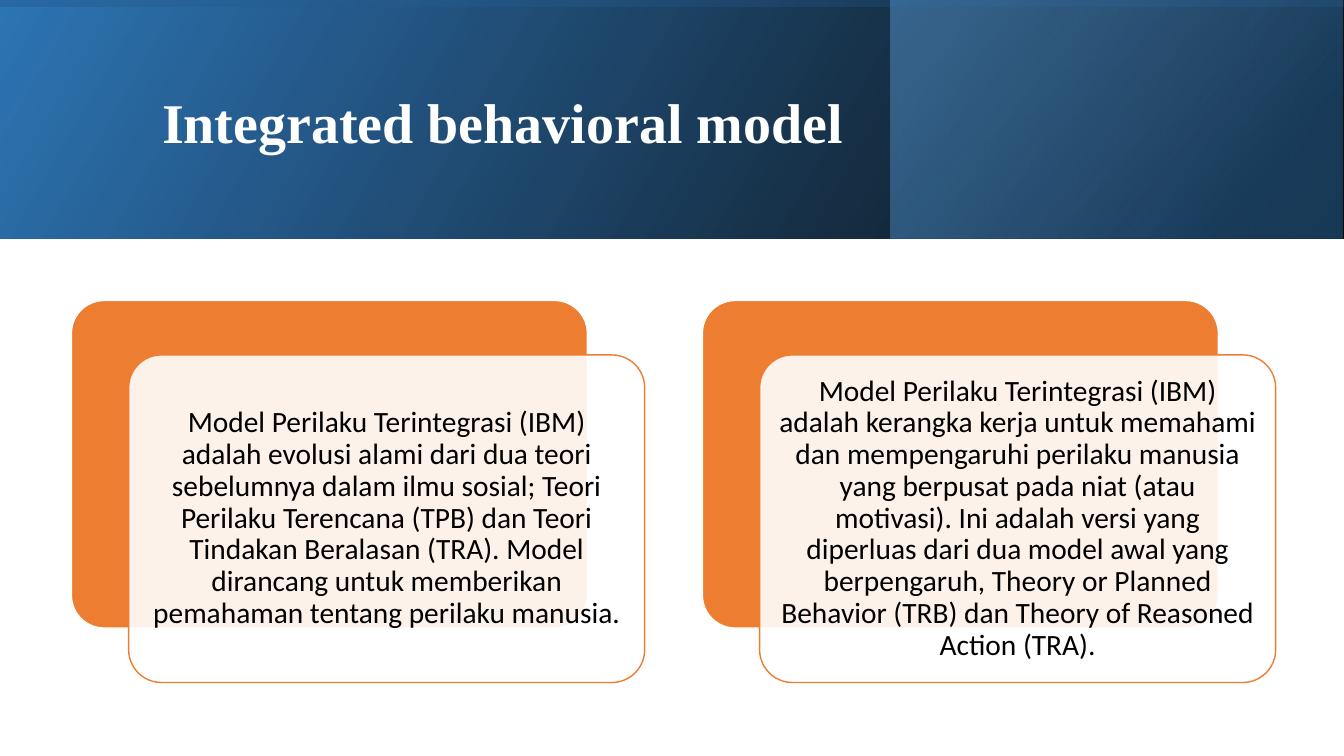
from pptx import Presentation
from pptx.dml.color import RGBColor
from pptx.enum.shapes import MSO_SHAPE
from pptx.enum.text import MSO_ANCHOR, PP_ALIGN
from pptx.oxml import parse_xml
from pptx.oxml.ns import nsdecls, qn
from pptx.util import Pt

WHITE, BLACK, ORANGE = "FFFFFF", "000000", "ED7D31"
BLUE, NAVY, SKY = "2E75B5", "1E4E79", "5B9BD5"
SLIDE_WIDTH, SLIDE_HEIGHT, BANNER_HEIGHT = 960, 540, 170.6
CARD_WIDTH, CARD_HEIGHT = 368.6, 234
CARD_LEFT, CARD_TOP, CARD_PITCH = 51, 214.6, 450.7
FRONT_SHIFT_X, FRONT_SHIFT_Y = 40.9, 38.9

STATEMENTS = [
    "Model Perilaku Terintegrasi (IBM) adalah evolusi alami dari dua teori "
    "sebelumnya dalam ilmu sosial; Teori Perilaku Terencana (TPB) dan Teori "
    "Tindakan Beralasan (TRA). Model dirancang untuk memberikan pemahaman "
    "tentang perilaku manusia.",
    "Model Perilaku Terintegrasi (IBM) adalah kerangka kerja untuk memahami "
    "dan mempengaruhi perilaku manusia yang berpusat pada niat (atau "
    "motivasi). Ini adalah versi yang diperluas dari dua model awal yang "
    "berpengaruh, Theory or Planned Behavior (TRB) dan Theory of Reasoned "
    "Action (TRA).",
]


def color(value):
    return RGBColor.from_string(value)


class SlideBuilder:
    title_font, title_size = "Times New Roman", 40
    body_font, body_size = "Calibri", 21
    line_spacing = 0.9

    def __init__(self, page):
        self.page = page

    def shape(self, kind, left, top, width, height):
        shape = self.page.shapes.add_shape(kind, Pt(left), Pt(top), Pt(width), Pt(height))
        shape.shadow.inherit = False
        return shape

    def gradient_band(self, left, top, width, height, angle, stops, rotation=0):
        band = self.shape(MSO_SHAPE.RECTANGLE, left, top, width, height)
        band.rotation = rotation
        band.line.fill.background()
        stop_xml = "".join(
            f'<a:gs pos="{position * 1000}"><a:srgbClr val="{value}">'
            f'<a:alpha val="{opacity * 1000}"/></a:srgbClr></a:gs>'
            for position, value, opacity in stops
        )
        gradient = parse_xml(
            f'<a:gradFill {nsdecls("a")} rotWithShape="1"><a:gsLst>{stop_xml}</a:gsLst>'
            f'<a:lin ang="{angle * 60000}" scaled="0"/></a:gradFill>'
        )
        properties = band._element.spPr
        properties.find(qn("a:xfrm")).set("flipH", "1")
        properties.find(qn("a:prstGeom")).addnext(gradient)

    def rounded_card(self, left, top, fill, line, opacity=100):
        card = self.shape(MSO_SHAPE.ROUNDED_RECTANGLE, left, top, CARD_WIDTH, CARD_HEIGHT)
        card.adjustments[0] = 0.1
        card.fill.solid()
        card.fill.fore_color.rgb = color(fill)
        card.line.color.rgb = color(line)
        card.line.width = Pt(1)
        if opacity < 100:
            fill_color = card._element.spPr.find(qn("a:solidFill"))[0]
            fill_color.append(parse_xml(f'<a:alpha {nsdecls("a")} val="{opacity * 1000}"/>'))
        return card

    def add_text(self, box, text, font, size, text_color, align, margins, bold=False):
        frame = box.text_frame
        frame.word_wrap = True
        frame.vertical_anchor = MSO_ANCHOR.MIDDLE
        frame.margin_left = frame.margin_right = Pt(margins[0])
        frame.margin_top = frame.margin_bottom = Pt(margins[1])
        para = frame.paragraphs[0]
        para.alignment = align
        para.line_spacing = self.line_spacing
        span = para.add_run()
        span.text = text
        span.font.name = font
        span.font.size = Pt(size)
        span.font.bold = bold
        span.font.color.rgb = color(text_color)

    def title(self, text, left, top, width, height):
        box = self.page.shapes.add_textbox(Pt(left), Pt(top), Pt(width), Pt(height))
        self.add_text(box, text, self.title_font, self.title_size, WHITE,
                      PP_ALIGN.LEFT, (7.2, 3.6), bold=True)

    def statement(self, text, left, top):
        self.rounded_card(left, top, ORANGE, WHITE)
        front = self.rounded_card(left + FRONT_SHIFT_X, top + FRONT_SHIFT_Y,
                                  WHITE, ORANGE, opacity=90)
        self.add_text(front, text, self.body_font, self.body_size, BLACK,
                      PP_ALIGN.CENTER, (6.5, 6.5))


def main():
    deck = Presentation()
    deck.slide_width, deck.slide_height = Pt(SLIDE_WIDTH), Pt(SLIDE_HEIGHT)
    builder = SlideBuilder(deck.slides.add_slide(deck.slide_layouts[6]))

    builder.gradient_band(0, 0, SLIDE_WIDTH, BANNER_HEIGHT, 330,
                          [(0, BLACK, 96), (100, BLUE, 100)])
    builder.gradient_band(636.2, 0, 323, BANNER_HEIGHT, 320,
                          [(0, NAVY, 68), (19, NAVY, 68), (100, SKY, 48)])
    center_shift = (SLIDE_WIDTH - BANNER_HEIGHT) / 2
    builder.gradient_band(center_shift, -center_shift, BANNER_HEIGHT, SLIDE_WIDTH, 350,
                          [(0, BLUE, 16), (23, BLUE, 16), (99, BLACK, 45), (100, BLACK, 45)],
                          rotation=270)

    builder.title("Integrated behavioral model", 108.7, 27.4, 765.4, 123.8)
    for index, text in enumerate(STATEMENTS):
        builder.statement(text, CARD_LEFT + index * CARD_PITCH, CARD_TOP)

    deck.save("out.pptx")


if __name__ == "__main__":
    main()
